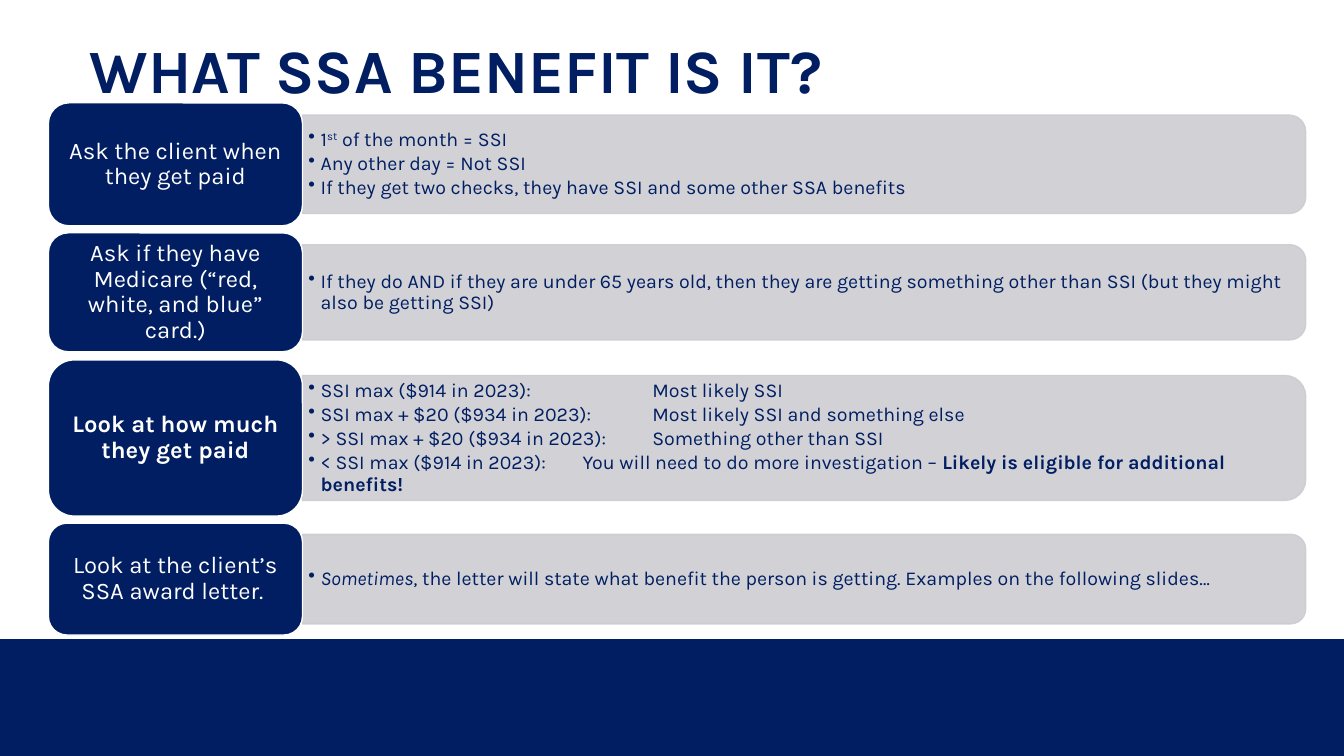
from lxml import etree
from pptx import Presentation
from pptx.dml.color import RGBColor
from pptx.enum.shapes import MSO_SHAPE as Shape
from pptx.enum.text import MSO_ANCHOR as Anchor, PP_ALIGN as Align
from pptx.oxml.ns import qn
from pptx.util import Inches, Pt

NAVY, GRAY, WHITE = "001E61", "CCCDD2", "FFFFFF"
LABEL_LEFT, LABEL_WIDTH = 0.48, 2.52
BAR_LEFT, BAR_LENGTH = 3, 9.95
TAB_STOPS = (2.72, 3.41)

# label top, label height, label, bold label, bullets made of (text, style) spans
STEPS = [
    (1.02, 1.22, "Ask the client when they get paid", False, [
        [("1", ""), ("st", "super"), (" of the month = SSI", "")],
        [("Any other day = Not SSI", "")],
        [("If they get two checks, they have SSI and some other SSA benefits", "")],
    ]),
    (2.31, 1.18, "Ask if they have Medicare (“red, white, and blue” card.)", False, [
        [("If they do AND if they are under 65 years old, then they are getting "
          "something other than SSI (but they might also be getting SSI)", "")],
    ]),
    (3.57, 1.55, "Look at how much they get paid", True, [
        [("SSI max ($914 in 2023): \t\tMost likely SSI", "")],
        [("SSI max + $20 ($934 in 2023): \tMost likely SSI and something else", "")],
        [("> SSI max + $20 ($934 in 2023): \tSomething other than SSI", "")],
        [("< SSI max ($914 in 2023): \tYou will need to do more investigation – ", ""),
         ("Likely is eligible for additional benefits!", "bold")],
    ]),
    (5.19, 1.11, "Look at the client’s SSA award letter. ", False, [
        [("Sometimes", "italic"),
         (", the letter will state what benefit the person is getting. "
          "Examples on the following slides…", "")],
    ]),
]


def color(hex_code):
    return RGBColor.from_string(hex_code)


def add_block(kind, left, top, width, height, fill):
    block = slide.shapes.add_shape(
        kind, Inches(left), Inches(top), Inches(width), Inches(height))
    block.shadow.inherit = False
    block.fill.solid()
    block.fill.fore_color.rgb = color(fill)
    block.line.fill.background()
    return block


deck = Presentation()
deck.slide_width, deck.slide_height = Inches(13.33), Inches(7.5)
slide = deck.slides.add_slide(deck.slide_layouts[5])

add_block(Shape.RECTANGLE, 0, 6.34, 13.33, 1.16, NAVY)

title = slide.shapes.title
title.left, title.top = Inches(0.79), Inches(0)
title.width, title.height = Inches(11.5), Inches(1.45)
title.text_frame.text = "WHAT SSA BENEFIT IS IT?"
title.text_frame.vertical_anchor = Anchor.MIDDLE
para = title.text_frame.paragraphs[0]
para.alignment = Align.LEFT
para.line_spacing = 0.9
para.font.name, para.font.size, para.font.bold = "Karla", Pt(44), True
para.font.color.rgb = color(NAVY)

for top, height, label, bold, bullets in STEPS:
    middle = top + height / 2
    bar_height = 0.8 * height

    # The bar is an upright shape turned a quarter, so its round end faces right
    bar = add_block(Shape.ROUND_2_SAME_RECTANGLE,
                    BAR_LEFT + (BAR_LENGTH - bar_height) / 2, middle - BAR_LENGTH / 2,
                    bar_height, BAR_LENGTH, GRAY)
    bar.rotation = 90
    bar.line.color.rgb = color(GRAY)
    bar.line.width = Pt(1)
    for rgb in bar._element.spPr.iter(qn("a:srgbClr")):
        etree.SubElement(rgb, qn("a:alpha"), val="90000")

    box = slide.shapes.add_textbox(Inches(BAR_LEFT), Inches(middle - bar_height / 2 + 0.05),
                                   Inches(9.9), Inches(bar_height - 0.1))
    frame = box.text_frame
    frame.word_wrap = True
    frame.vertical_anchor = Anchor.MIDDLE
    frame.margin_left = frame.margin_right = Inches(0.06)
    frame.margin_top = frame.margin_bottom = Inches(0.03)
    for number, spans in enumerate(bullets):
        para = frame.add_paragraph() if number else frame.paragraphs[0]
        para.line_spacing = 0.9
        para.space_after = Pt(2.1)
        props = para._p.get_or_add_pPr()
        props.set("marL", str(Inches(0.12)))
        props.set("indent", str(Inches(-0.12)))
        etree.SubElement(props, qn("a:buChar"), char="•")
        if any("\t" in text for text, style in spans):
            tabs = etree.SubElement(props, qn("a:tabLst"))
            for stop in TAB_STOPS:
                etree.SubElement(tabs, qn("a:tab"), pos=str(Inches(stop)), algn="l")
        para.font.name, para.font.size = "Karla", Pt(14)
        para.font.color.rgb = color(NAVY)
        for text, style in spans:
            span = para.add_run()
            span.text = text
            if style == "bold":
                span.font.bold = True
            elif style == "italic":
                span.font.italic = True
            elif style == "super":
                span._r.get_or_add_rPr().set("baseline", "30000")

    tile = add_block(Shape.ROUNDED_RECTANGLE, LABEL_LEFT, top, LABEL_WIDTH, height, NAVY)
    tile.line.color.rgb = color(WHITE)
    tile.line.width = Pt(1)
    frame = tile.text_frame
    frame.word_wrap = True
    frame.vertical_anchor = Anchor.MIDDLE
    frame.margin_left = frame.margin_right = Inches(0.07)
    frame.margin_top = frame.margin_bottom = Inches(0.04)
    para = frame.paragraphs[0]
    para.text = label
    para.alignment = Align.CENTER
    para.line_spacing = 0.9
    para.font.name, para.font.size, para.font.bold = "Karla", Pt(17), bold
    para.font.color.rgb = color(WHITE)

deck.save("out.pptx")
